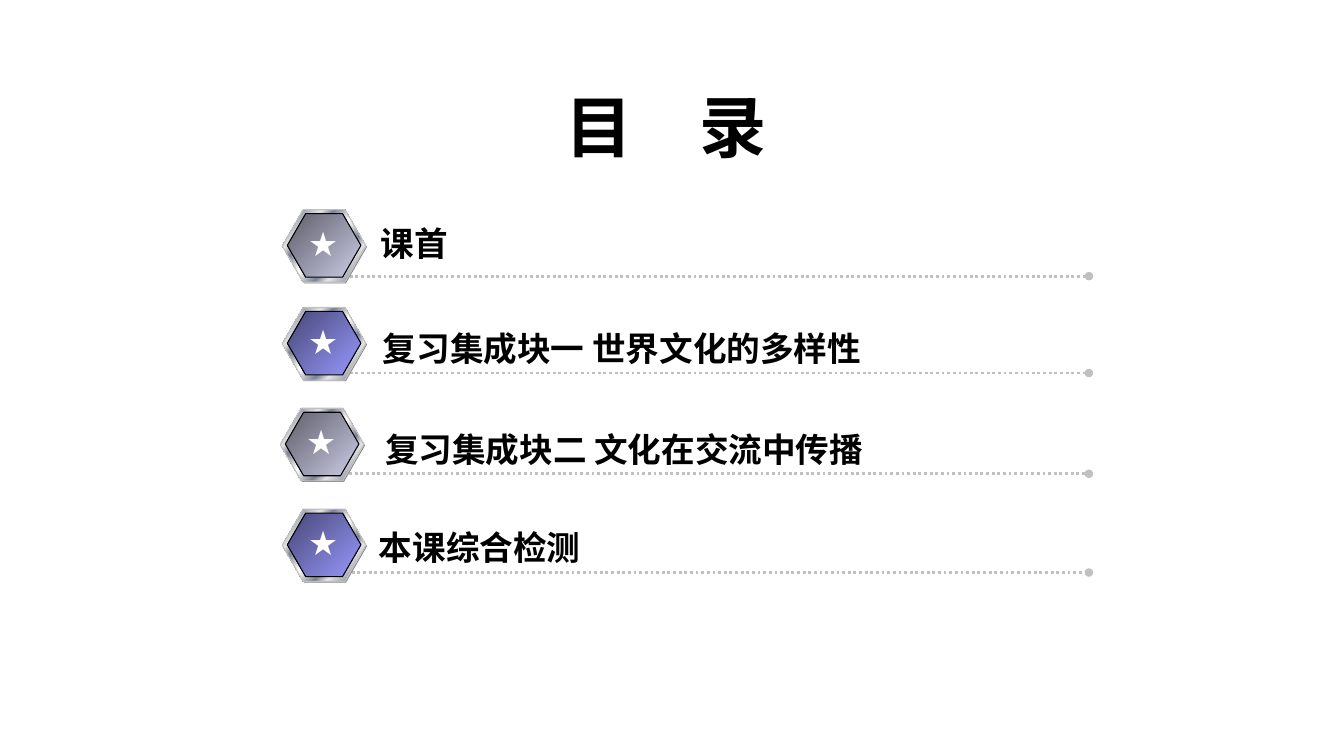
from lxml import etree
from pptx import Presentation
from pptx.dml.color import RGBColor
from pptx.enum.dml import MSO_LINE
from pptx.enum.shapes import MSO_CONNECTOR, MSO_SHAPE
from pptx.enum.text import MSO_ANCHOR, MSO_AUTO_SIZE, PP_ALIGN
from pptx.oxml.ns import qn
from pptx.util import Inches, Pt

HEXAGON, STRAIGHT = MSO_SHAPE.HEXAGON, MSO_CONNECTOR.STRAIGHT
DOTS, GROW, MIDDLE = MSO_LINE.ROUND_DOT, MSO_AUTO_SIZE.SHAPE_TO_FIT_TEXT, MSO_ANCHOR.MIDDLE
LEFT, CENTER = PP_ALIGN.LEFT, PP_ALIGN.CENTER

BLACK = RGBColor(0x00, 0x00, 0x00)
WHITE = RGBColor(0xFF, 0xFF, 0xFF)
GRAY = RGBColor(0x80, 0x80, 0x80)
SILVER = RGBColor(0xC0, 0xC0, 0xC0)
PALE = RGBColor(0xE6, 0xE6, 0xE6)
STEEL = RGBColor(0x7D, 0x84, 0x96)

METAL = [(0, PALE), (8, STEEL), (26, PALE), (34, STEEL), (46, PALE), (50, WHITE),
         (54, PALE), (66, STEEL), (74, PALE), (92, STEEL), (100, PALE)]
STONE = [(0, RGBColor(0x5E, 0x5E, 0x6A)), (100, RGBColor(0xCC, 0xCC, 0xE6))]
VIOLET = [(0, RGBColor(0x47, 0x47, 0x76)), (100, RGBColor(0x99, 0x99, 0xFF))]

CJK = "Noto Sans CJK JP"
TITLE = {"name": CJK, "size": Pt(48), "bold": True}
LABEL = {"name": CJK, "size": Pt(24), "bold": True}
STAR = {"name": "Arial", "size": Pt(24), "bold": True}

RULE_END = 10.8
# badge left, badge top, face, rule start, rule height, label left, label top, label width, label
ROWS = [
    (2.80, 2.08, STONE, 3.47, 2.74, 3.68, 2.16, 5.67, "课首"),
    (2.80, 3.05, VIOLET, 3.47, 3.70, 3.70, 3.20, 5.67, "复习集成块一 世界文化的多样性"),
    (2.78, 4.05, STONE, 3.24, 4.70, 3.72, 4.21, 5.75, "复习集成块二 文化在交流中传播"),
    (2.80, 5.05, VIOLET, 3.21, 5.68, 3.66, 5.18, 5.31, "本课综合检测"),
]


def write(shape, text, style, color, align):
    para = shape.text_frame.paragraphs[0]
    para.alignment = align
    run = para.add_run()
    run.text = text
    for key, value in style.items():
        setattr(run.font, key, value)
    run.font.color.rgb = color
    props = run.font._element
    etree.SubElement(props, qn("a:ea")).set("typeface", style["name"])


def shade(fill, stops):
    """Fill with a gradient running from top left to bottom right."""
    fill.gradient()
    fill.gradient_angle = 315
    holder = fill._xPr.find(qn("a:gradFill")).find(qn("a:gsLst"))
    for old in list(holder):
        holder.remove(old)
    for share, color in stops:
        stop = etree.SubElement(holder, qn("a:gs"), pos=str(share * 1000))
        etree.SubElement(stop, qn("a:srgbClr"), val=str(color))


deck = Presentation()
deck.slide_width, deck.slide_height = Inches(13.33), Inches(7.5)
slide = deck.slides.add_slide(deck.slide_layouts[5])

title = slide.shapes.title
title.left, title.top = Inches(2.02), Inches(0.72)
title.width, title.height = Inches(9.17), Inches(1.05)
title.text_frame.vertical_anchor = MIDDLE
write(title, "目　录", TITLE, BLACK, CENTER)

for left, top, face, start, level, text_x, text_y, width, text in ROWS:
    rule = slide.shapes.add_connector(
        STRAIGHT, Inches(start), Inches(level), Inches(RULE_END), Inches(level))
    rule.line.color.rgb = SILVER
    rule.line.width = Pt(2)
    rule.line.dash_style = DOTS
    etree.SubElement(rule.line._get_or_add_ln(), qn("a:tailEnd"), type="oval")
    etree.SubElement(rule._element.spPr, qn("a:effectLst"))

    badge = slide.shapes.add_group_shape()
    layers = [(0.01, 0.01, 0.83, 0.72, None, None),
              (0, 0, 0.83, 0.72, METAL, SILVER),
              (0.05, 0.04, 0.73, 0.63, face, BLACK)]
    for dx, dy, wide, high, stops, edge in layers:
        hexa = badge.shapes.add_shape(
            HEXAGON, Inches(left + dx), Inches(top + dy), Inches(wide), Inches(high))
        hexa.adjustments[0], hexa.adjustments[1] = 0.289, 1.155
        hexa.shadow.inherit = False
        if stops:
            shade(hexa.fill, stops)
            hexa.line.color.rgb = edge
            hexa.line.width = Pt(0.75)
        else:
            hexa.fill.solid()
            hexa.fill.fore_color.rgb = GRAY
            hexa.line.fill.background()

    texts = [(left + 0.14, top + 0.08, 0.53, False, "★", STAR, WHITE, CENTER),
             (text_x, text_y, width, True, text, LABEL, BLACK, LEFT)]
    for x, y, wide, wrap, words, style, color, align in texts:
        box = slide.shapes.add_textbox(Inches(x), Inches(y), Inches(wide), Inches(0.5))
        box.text_frame.word_wrap = wrap
        box.text_frame.auto_size = GROW
        write(box, words, style, color, align)

deck.save("out.pptx")
